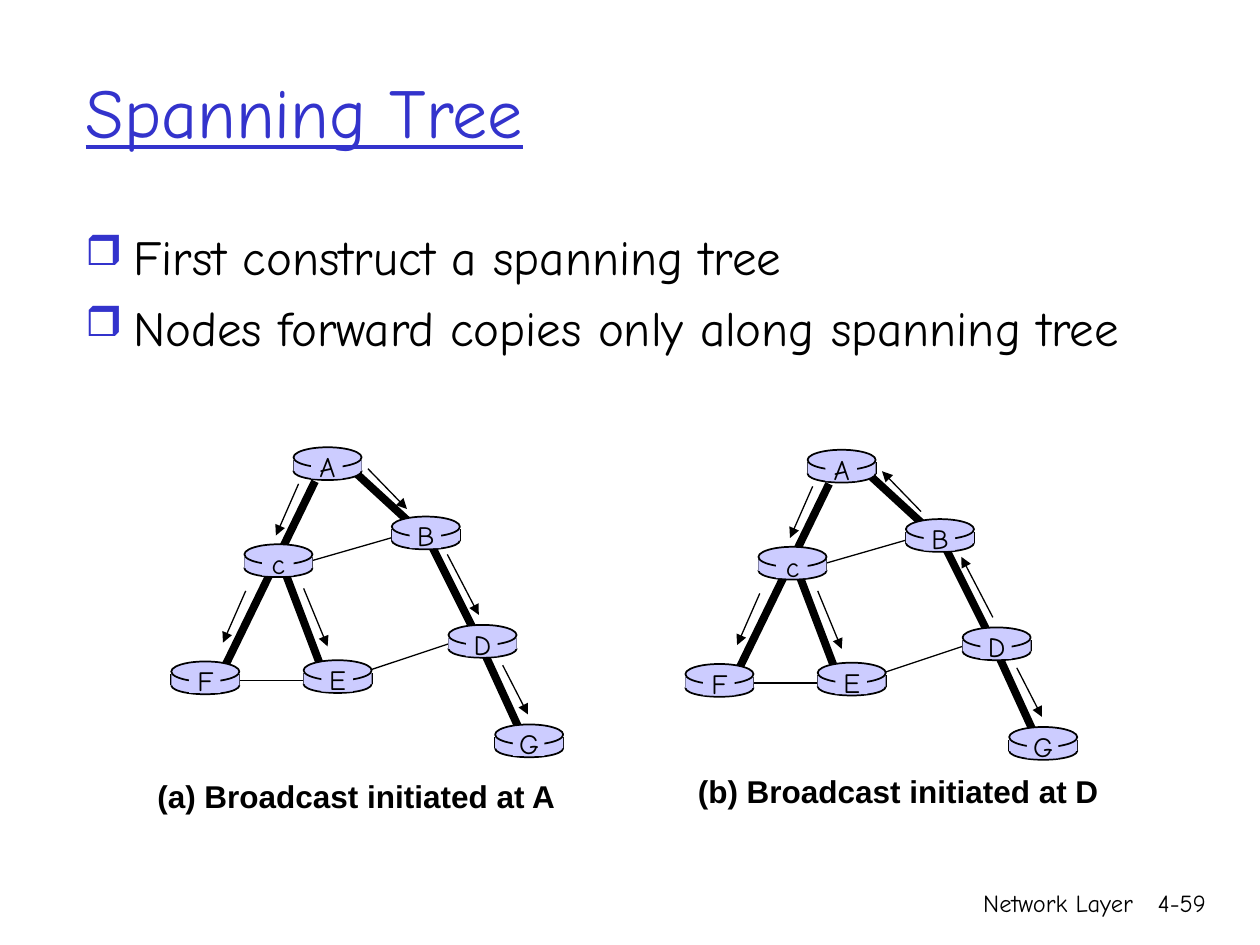
import pptx
import pptx.util
import pptx.dml.color
import pptx.enum.shapes
import pptx.enum.text
import pptx.oxml
import pptx.oxml.ns
import lxml.etree

Inches, Pt = pptx.util.Inches, pptx.util.Pt
RGB = pptx.dml.color.RGBColor
SHAPE = pptx.enum.shapes.MSO_SHAPE
ALIGN = pptx.enum.text.PP_ALIGN
ANCHOR = pptx.enum.text.MSO_ANCHOR
qn = pptx.oxml.ns.qn

BLUE = RGB(0x33, 0x33, 0xCC)
LILAC = RGB(0xCC, 0xCC, 0xFF)
BLACK = RGB(0, 0, 0)
HAND = "Comic Neue"

# Lengths in inches; routers and links are relative to the tree's corner
WIDE = 0.54
ROUTERS = {"A": (0.97, 0.03), "B": (1.75, 0.58), "G": (2.57, 2.23),
           "D": (2.2, 1.44), "E": (1.05, 1.72), "c": (0.58, 0.8),
           "F": (0, 1.73)}
TREE = [(2.03, 0.74, 2.4, 1.48), (2.41, 1.5, 2.79, 2.33),
        (1.19, 1.78, 0.89, 0.99), (1.46, 0.23, 1.95, 0.68),
        (1.14, 0.3, 0.4, 1.82)]
SPARE = [(2.23, 1.58, 1.57, 1.8), (1.22, 1.88, 0.41, 1.88),
         (1.08, 0.94, 1.81, 0.73)]
HOPS = {"AC": (1.01, 0.32, 0.83, 0.73), "CF": (0.59, 1.17, 0.41, 1.58),
        "AB": (1.56, 0.2, 1.87, 0.52), "BD": (2.19, 0.88, 2.44, 1.36),
        "DG": (2.63, 1.76, 2.83, 2.15), "CE": (1.05, 1.15, 1.24, 1.61)}


def line(parts, x1, y1, x2, y2, width, arrow=False):
    link = parts.add_connector(pptx.enum.shapes.MSO_CONNECTOR.STRAIGHT,
                               Inches(x1), Inches(y1), Inches(x2), Inches(y2))
    link.line.color.rgb = BLACK
    link.line.width = Pt(width)
    if arrow:
        tip = lxml.etree.SubElement(link.line._get_or_add_ln(), qn("a:tailEnd"))
        tip.set("type", "triangle")
    lxml.etree.SubElement(link._element.spPr, qn("a:effectLst"))


def solid(parts, kind, x, y, w, h, edge=False):
    shape = parts.add_shape(kind, Inches(x), Inches(y), Inches(w), Inches(h))
    shape.shadow.inherit = False
    shape.fill.solid()
    shape.fill.fore_color.rgb = LILAC
    if edge:
        shape.line.color.rgb = BLACK
        shape.line.width = Pt(1)
    else:
        shape.line.fill.background()


def style(para, size, name=HAND, color=BLACK, align=None):
    para.font.size = Pt(size)
    para.font.name = name
    para.font.color.rgb = color
    para.alignment = align


def label(parts, text, x, y, w, h, size, name=HAND, align=None, wrap=False):
    box = parts.add_textbox(Inches(x), Inches(y), Inches(w), Inches(h))
    box.text_frame.word_wrap = wrap
    para = box.text_frame.paragraphs[0]
    para.text = text
    style(para, size, name, align=align)
    return para


def router(parts, name, x, y):
    solid(parts, SHAPE.OVAL, x, y + 0.12, WIDE, 0.14, edge=True)
    for side in (x, x + WIDE):
        line(parts, side, y + 0.1, side, y + 0.19, 1)
    solid(parts, SHAPE.RECTANGLE, x, y + 0.1, WIDE, 0.09)
    solid(parts, SHAPE.OVAL, x, y, WIDE, 0.16, edge=True)
    # Blank patch behind the letter
    solid(parts, SHAPE.RECTANGLE, x + 0.14, y + 0.02, 0.25, 0.23)
    label(parts, name, x + 0.09, y - 0.03, 0.36, 0.37, 16, align=ALIGN.CENTER)


def network(slide, x, y, back=()):
    """Draw the routers and links; hops named in back point upwards."""
    parts = slide.shapes.add_group_shape().shapes
    for links, width in ((TREE, 4.5), (SPARE, 0.75)):
        for x1, y1, x2, y2 in links:
            line(parts, x + x1, y + y1, x + x2, y + y2, width)
    for name, (dx, dy) in ROUTERS.items():
        router(parts, name, x + dx, y + dy)
    for hop, (x1, y1, x2, y2) in HOPS.items():
        if hop in back:
            x1, y1, x2, y2 = x2, y2, x1, y1
        line(parts, x + x1, y + y1, x + x2, y + y2, 0.75, arrow=True)


def heading(slide, x, y, w, h):
    title = slide.shapes.title
    title.left, title.top = Inches(x), Inches(y)
    title.width, title.height = Inches(w), Inches(h)
    title.text_frame.text = "Spanning Tree"
    title.text_frame.vertical_anchor = ANCHOR.MIDDLE
    para = title.text_frame.paragraphs[0]
    style(para, 40, color=BLUE, align=ALIGN.LEFT)
    para.font.underline = True


def bullets(slide, x, y, w, h, items):
    box = slide.shapes.add_textbox(Inches(x), Inches(y), Inches(w), Inches(h))
    frame = box.text_frame
    frame.word_wrap = True
    for i, text in enumerate(items):
        para = frame.add_paragraph() if i else frame.paragraphs[0]
        para.text = text
        style(para, 28)
        para.space_before = Pt(6.7)
        props = para._p.get_or_add_pPr()
        props.set("marL", str(Inches(0.38)))
        props.set("indent", str(-Inches(0.38)))
        # Blue box bullet, placed ahead of the font defaults
        rest = props.find(qn("a:defRPr"))
        color = lxml.etree.Element(qn("a:buClr"))
        lxml.etree.SubElement(color, qn("a:srgbClr")).set("val", str(BLUE))
        size = lxml.etree.Element(qn("a:buSzPct"))
        size.set("val", "85000")
        mark = lxml.etree.Element(qn("a:buChar"))
        mark.set("char", "❒")
        for node in (color, size, mark):
            if rest is None:
                props.append(node)
            else:
                rest.addprevious(node)


def footer(slide, y, h):
    for text, x, w in (("Network Layer", 5.92, 3.17), ("4-59", 8.93, 0.74)):
        label(slide.shapes, text, x, y, w, h, 14, align=ALIGN.RIGHT, wrap=True)


def main():
    deck = pptx.Presentation()
    deck.slide_width, deck.slide_height = Inches(10), Inches(7.5)
    slide = deck.slides.add_slide(deck.slide_layouts[5])
    footer(slide, 7, 0.5)

    # Two broadcasts over the same tree
    network(slide, 1.36, 3.52)
    network(slide, 5.44, 3.54, back=("AB", "BD"))
    for text, x, y in (("(a) Broadcast initiated at A", 1.15, 6.12),
                       ("(b) Broadcast initiated at D", 5.44, 6.08)):
        note = label(slide.shapes, text, x, y, 3.38, 0.4, 18, "Arial")
        note.font.bold = True

    heading(slide, 0.58, 0.25, 8.5, 1.25)
    bullets(slide, 0.58, 1.75, 8.5, 2.03,
            ("First construct a spanning tree",
             "Nodes forward copies only along spanning tree"))
    deck.save("out.pptx")


if __name__ == "__main__":
    main()
